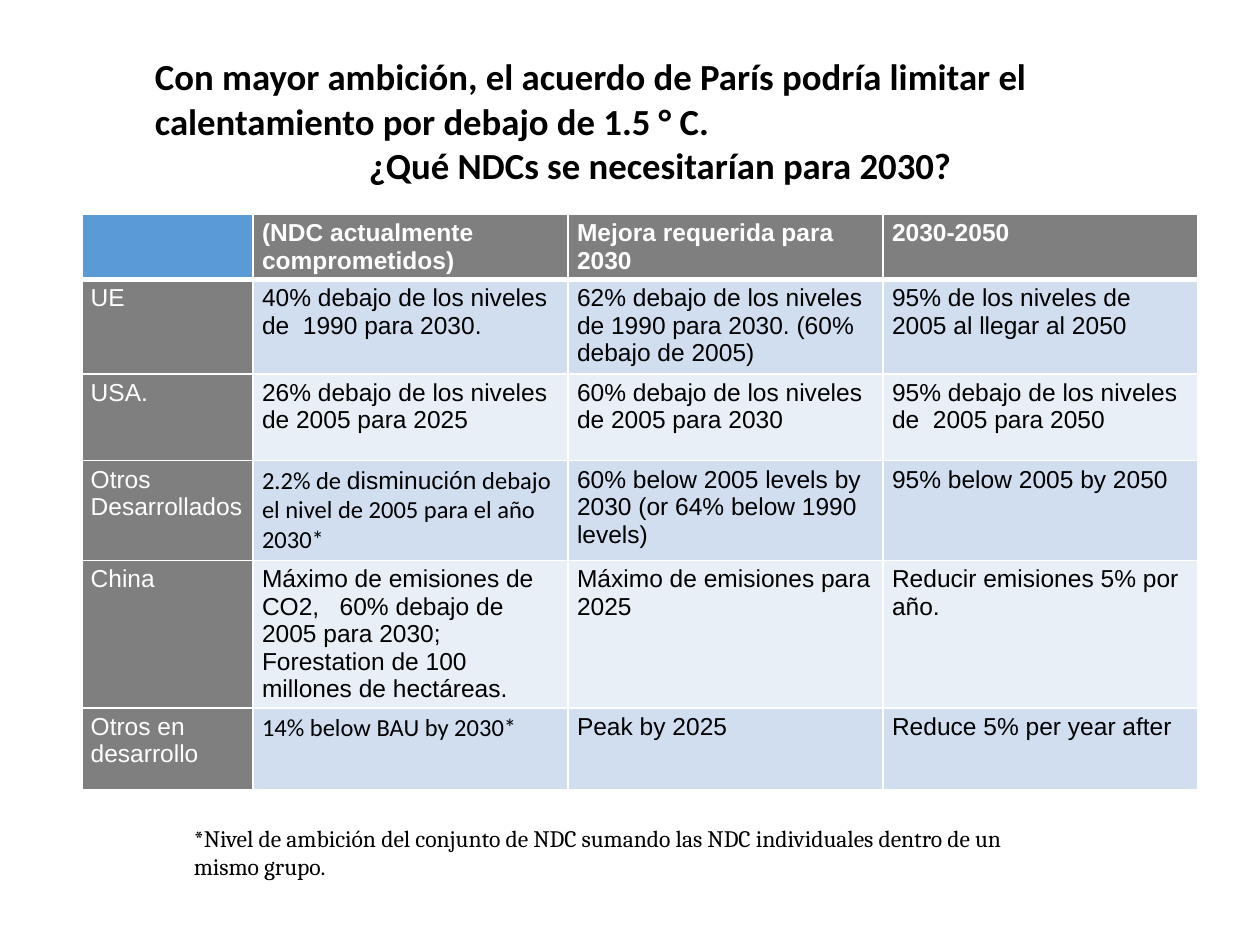
import pptx
import pptx.util
import pptx.dml.color
import pptx.enum.text
import pptx.oxml
import pptx.oxml.ns

Inches, Pt = pptx.util.Inches, pptx.util.Pt
Align, Anchor = pptx.enum.text.PP_ALIGN, pptx.enum.text.MSO_ANCHOR

# Content
TITLE = [
    ("Con mayor ambición, el acuerdo de París podría limitar el "
     "calentamiento por debajo de 1.5 ° C.", Align.LEFT),
    ("¿Qué NDCs se necesitarían para 2030?", Align.CENTER),
]
HEADER = ["", "(NDC actualmente comprometidos)", "Mejora requerida para 2030", "2030-2050"]
# A cell is a string, or a list of paragraphs, each a list of (text, font role) runs
ROWS = [
    ["UE", "40% debajo de los niveles de  1990 para 2030.",
     "62% debajo de los niveles de 1990 para 2030. (60% debajo de 2005)",
     "95% de los niveles de 2005 al llegar al 2050"],
    ["USA.", "26% debajo de los niveles de 2005 para 2025",
     "60% debajo de los niveles de 2005 para 2030",
     "95% debajo de los niveles de  2005 para 2050"],
    ["Otros Desarrollados",
     [[("2.2% de ", "accent"), ("disminución", "body"),
       (" debajo el nivel de 2005 para el año 2030*", "accent")]],
     "60% below 2005 levels by 2030 (or 64% below 1990 levels)",
     "95% below 2005 by 2050"],
    ["China",
     [[("Máximo de emisiones de CO2,   60% debajo de 2005 para 2030;", "body")],
      [("Forestation de 100 millones de hectáreas.", "body")]],
     "Máximo de emisiones para 2025", "Reducir emisiones 5% por año."],
    ["Otros en desarrollo", [[("14% below BAU by 2030*", "accent")]],
     "Peak by 2025", "Reduce 5% per year after"],
]
FOOTNOTE = ("*Nivel de ambición del conjunto de NDC sumando las NDC individuales "
            "dentro de un mismo grupo.")

COLUMN_WIDTHS = [1.36, 2.5, 2.5, 2.5]
ROW_HEIGHTS = [0.38, 0.75, 0.69, 0.75, 0.75, 0.65]

THEME = {
    "fonts": {"body": "Arial", "accent": "Calibri", "note": "Cambria"},
    "sizes": {"title": 21, "table": 14, "note": 13.5},
    "text": "000000", "light": "FFFFFF", "corner": "5B9BD5",
    "heading": "7F7F7F", "bands": ["D0DEEF", "E9EFF7"],
}


def color(value):
    return pptx.dml.color.RGBColor.from_string(value)


def add_span(para, text, role, size, ink, bold=False):
    span = para.add_run()
    span.text = text
    span.font.name = THEME["fonts"][role]
    span.font.size = Pt(THEME["sizes"][size])
    span.font.bold = bold
    span.font.color.rgb = color(ink)


def set_margins(item, side, end):
    item.margin_left = item.margin_right = Inches(side)
    item.margin_top = item.margin_bottom = Inches(end)


def set_borders(cell, bottom):
    properties = cell._tc.get_or_add_tcPr()
    for tag, width in (("lnL", 1), ("lnR", 1), ("lnT", 1), ("lnB", bottom)):
        properties.append(pptx.oxml.parse_xml(
            f'<a:{tag} {pptx.oxml.ns.nsdecls("a")} w="{Pt(width)}"><a:solidFill>'
            f'<a:srgbClr val="{THEME["light"]}"/></a:solidFill></a:{tag}>'))


def fill_cell(cell, content, row, column):
    is_header = row == 0
    is_heading = is_header or column == 0
    if row == column == 0:
        fill = THEME["corner"]
    else:
        fill = THEME["heading"] if is_heading else THEME["bands"][(row - 1) % 2]
    set_margins(cell, 0.07, 0.04)
    set_borders(cell, 3 if is_header else 1)
    cell.fill.solid()
    cell.fill.fore_color.rgb = color(fill)
    if not content:
        return
    paragraphs = [[(content, "body")]] if isinstance(content, str) else content
    for index, spans in enumerate(paragraphs):
        para = cell.text_frame.add_paragraph() if index else cell.text_frame.paragraphs[0]
        for text, role in spans:
            add_span(para, text, role, "table",
                     THEME["light"] if is_heading else THEME["text"], is_header)


def add_title(page):
    box = page.shapes.title
    box.left, box.top, box.width, box.height = map(Inches, (1.16, 0.07, 8.16, 1.77))
    frame = box.text_frame
    frame.word_wrap = True
    frame.auto_size = pptx.enum.text.MSO_AUTO_SIZE.NONE
    frame.vertical_anchor = Anchor.MIDDLE
    set_margins(frame, 0.07, 0.04)
    for index, (text, alignment) in enumerate(TITLE):
        para = frame.add_paragraph() if index else frame.paragraphs[0]
        para.alignment = alignment
        add_span(para, text, "accent", "title", THEME["text"], True)


def add_commitments(page):
    contents = [HEADER] + ROWS
    table = page.shapes.add_table(
        len(contents), len(HEADER), Inches(0.65), Inches(1.7),
        Inches(sum(COLUMN_WIDTHS)), Inches(sum(ROW_HEIGHTS))).table
    for column, width in zip(table.columns, COLUMN_WIDTHS):
        column.width = Inches(width)
    for row, height in zip(table.rows, ROW_HEIGHTS):
        row.height = Inches(height)
    for row, cells in enumerate(contents):
        for column, content in enumerate(cells):
            fill_cell(table.cell(row, column), content, row, column)


def add_footnote(page):
    box = page.shapes.add_textbox(*map(Inches, (1.44, 6.49, 6.94, 0.33)))
    box.text_frame.word_wrap = True
    set_margins(box.text_frame, 0.1, 0.05)
    add_span(box.text_frame.paragraphs[0], FOOTNOTE, "note", "note", THEME["text"])


def main():
    deck = pptx.Presentation()
    deck.slide_width, deck.slide_height = Inches(10), Inches(7.5)
    page = deck.slides.add_slide(deck.slide_layouts.get_by_name("Title Only"))
    add_title(page)
    add_commitments(page)
    add_footnote(page)
    deck.save("out.pptx")


if __name__ == "__main__":
    main()
